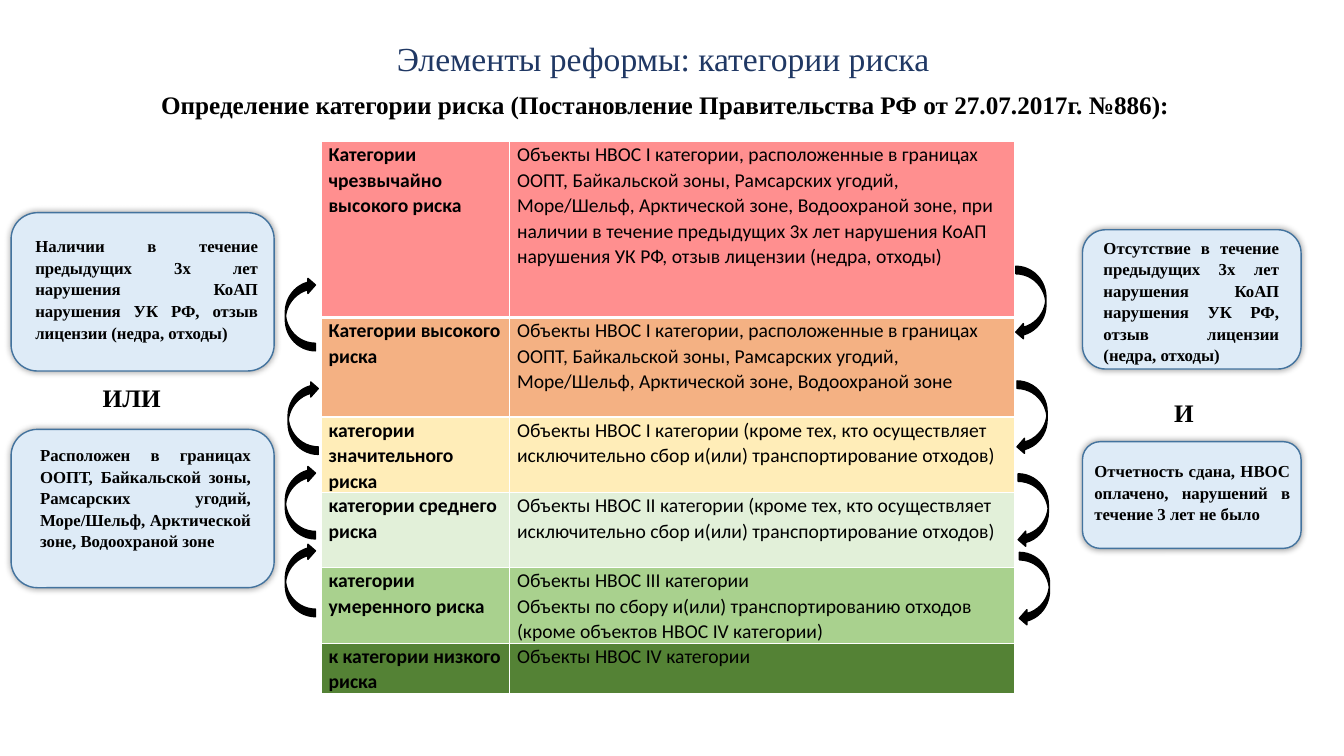
from dataclasses import dataclass

from pptx import Presentation
from pptx.dml.color import RGBColor
from pptx.enum.shapes import MSO_SHAPE as Preset
from pptx.enum.text import MSO_AUTO_SIZE as AutoSize, PP_ALIGN as Align
from pptx.oxml import parse_xml
from pptx.oxml.ns import nsdecls
from pptx.util import Cm, Pt


@dataclass(frozen=True)
class Theme:
    serif: str = "Times New Roman"
    sans: str = "Calibri"
    title_size: int = 24
    heading_size: int = 18
    table_size: int = 14
    note_size: int = 12
    title: str = "203864"
    ink: str = "000000"
    white: str = "FFFFFF"
    card: str = "DEEBF7"
    card_edge: str = "43739E"
    extreme: str = "FF0000"
    high: str = "F4B183"
    significant: str = "FFD966"
    medium: str = "E2F0D9"
    moderate: str = "A9D18E"
    low: str = "548235"
    line_spacing: float = 1.07


def color(value):
    return RGBColor.from_string(value)


def apply(target, values):
    for name, value in values.items():
        setattr(target, name, value)


def lengths(box):
    return [Cm(value) for value in box]


class RiskSlide:
    def __init__(self, slide, theme):
        self.slide = slide
        self.theme = theme

    def fill_text(self, frame, text, size, **style):
        values = {"font": self.theme.serif, "ink": self.theme.ink, "bold": True,
                  "align": None, "spacing": None} | style
        frame.text = text
        for paragraph in frame.paragraphs:
            apply(paragraph, {"alignment": values["align"], "line_spacing": values["spacing"]})
            for run in paragraph.runs:
                apply(run.font, {"name": values["font"], "size": Pt(size), "bold": values["bold"]})
                run.font.color.rgb = color(values["ink"])

    def text(self, box, text, size, wrap=True, **style):
        frame = self.slide.shapes.add_textbox(*lengths(box)).text_frame
        apply(frame, {"word_wrap": wrap, "auto_size": AutoSize.SHAPE_TO_FIT_TEXT})
        self.fill_text(frame, text, size, **style)

    def shape(self, preset, box, fill, edge):
        shape = self.slide.shapes.add_shape(preset, *lengths(box))
        shape.shadow.inherit = False
        shape.fill.solid()
        shape.fill.fore_color.rgb = color(fill)
        shape.line.color.rgb = color(edge)
        shape.line.width = Pt(1)
        return shape

    def card(self, box):
        shape = self.shape(Preset.ROUNDED_RECTANGLE, box, self.theme.card, self.theme.card_edge)
        shape._element.spPr.find("{*}effectLst").append(parse_xml(
            f'<a:outerShdw {nsdecls("a")} blurRad="{Pt(5)}" dist="0" dir="0">'
            f'<a:srgbClr val="{self.theme.ink}"><a:alpha val="40000"/></a:srgbClr></a:outerShdw>'))

    def arrow(self, left, top, rotation=0):
        shape = self.shape(Preset.CURVED_LEFT_ARROW, (left, top, 0.76, 1.85),
                           self.theme.ink, self.theme.ink)
        shape.rotation = rotation

    def cell(self, cell, text, fill, alpha, bold, borders):
        margins = {"margin_left": Cm(0.18), "margin_right": Cm(0.18),
                   "margin_top": 0, "margin_bottom": 0}
        apply(cell, margins)
        self.fill_text(cell.text_frame, text, self.theme.table_size, font=self.theme.sans,
                       bold=bold, spacing=self.theme.line_spacing)
        cell.fill.solid()
        cell.fill.fore_color.rgb = color(fill)
        properties = cell._tc.tcPr
        if alpha < 100:
            properties.find(".//{*}srgbClr").append(
                parse_xml(f'<a:alpha {nsdecls("a")} val="{alpha * 1000}"/>'))
        for index, (side, width) in enumerate(borders.items()):
            properties.insert(index, parse_xml(
                f'<a:ln{side} {nsdecls("a")} w="{Pt(width)}"><a:solidFill>'
                f'<a:srgbClr val="{self.theme.white}"/></a:solidFill></a:ln{side}>'))

    def table(self, left, top, widths, rows):
        heights = [row[0] for row in rows]
        box = (left, top, sum(widths), sum(heights))
        table = self.slide.shapes.add_table(len(rows), len(widths), *lengths(box)).table
        apply(table, {"first_row": False, "horz_banding": False})
        for column, width in zip(table.columns, widths):
            column.width = Cm(width)
        for index, (height, fill, alpha, *texts) in enumerate(rows):
            table.rows[index].height = Cm(height)
            borders = {"L": 1, "R": 1, "T": 3 if index == 1 else 1, "B": 3 if index == 0 else 1}
            for column, text in enumerate(texts):
                self.cell(table.cell(index, column), text, fill, alpha, column == 0, borders)


def main():
    presentation = Presentation()
    apply(presentation, {"slide_width": Cm(33.87), "slide_height": Cm(19.05)})
    theme = Theme()
    slide = RiskSlide(presentation.slides.add_slide(presentation.slide_layouts[6]), theme)

    cards = [(27.28, 11.13, 5.51, 2.69), (27.28, 5.79, 5.51, 3.51),
             (0.28, 10.82, 6.63, 3.99), (0.28, 5.36, 6.63, 3.99)]
    for box in cards:
        slide.card(box)

    slide.text((3.02, 0.84, 27.38, 1.27), "Элементы реформы: категории риска",
               theme.title_size, ink=theme.title, bold=False, align=Align.CENTER)
    slide.text((2.34, 2.13, 29.01, 1.02),
               "Определение категории риска (Постановление Правительства РФ от 27.07.2017г. №886): ",
               theme.heading_size, align=Align.CENTER)

    violations = "нарушения КоАП нарушения УК РФ, отзыв лицензии (недра, отходы)"
    zones = "Рамсарских угодий, Море/Шельф, Арктической зоне, Водоохраной зоне"
    located = f"Объекты НВОС I категории, расположенные в границах ООПТ, Байкальской зоны, {zones}"
    except_waste = "(кроме тех, кто осуществляет исключительно сбор и(или) транспортирование отходов)"
    slide.table(8.1, 3.56, (4.75, 12.72), [
        (4.44, theme.extreme, 44, "Категории чрезвычайно высокого риска",
         f"{located}, при наличии в течение предыдущих 3х лет {violations}"),
        (2.51, theme.high, 100, "Категории высокого риска", located),
        (1.89, theme.significant, 46, "категории значительного риска",
         f"Объекты НВОС I категории {except_waste}"),
        (1.89, theme.medium, 100, "категории среднего риска",
         f"Объекты НВОС II категории {except_waste}"),
        (1.89, theme.moderate, 100, "категории умеренного риска",
         "Объекты НВОС III категории\nОбъекты по сбору и(или) транспортированию отходов "
         "(кроме объектов НВОС IV категории)"),
        (1.26, theme.low, 100, "к категории низкого риска", "Объекты НВОС IV категории"),
    ])

    for index, top in enumerate((6.71, 9.6, 11.94, 13.92)):
        slide.arrow(25.6 + 0.03 * index, top)
    for left, top in ((7.19, 6.99), (7.26, 9.6), (7.19, 11.73), (7.19, 13.69)):
        slide.arrow(left, top, rotation=180)

    notes = [
        ((0.64, 5.79, 6.12, 2.97), f"Наличии в течение предыдущих 3х лет {violations}"),
        ((0.76, 11.05, 5.82, 3.51), f"Расположен в границах ООПТ, Байкальской зоны, {zones} "),
        ((27.56, 5.82, 4.93, 3.53), f"Отсутствие в течение предыдущих 3х лет {violations}"),
        ((27.33, 11.46, 5.44, 1.9),
         "Отчетность сдана, НВОС оплачено, нарушений в течение 3 лет не было"),
    ]
    for box, text in notes:
        slide.text(box, text, theme.note_size, align=Align.JUSTIFY, spacing=theme.line_spacing)

    for box, text in (((2.34, 9.5, 1.98, 1.02), "ИЛИ"), ((29.34, 9.88, 1.02, 1.02), "И")):
        slide.text(box, text, theme.heading_size, wrap=False)

    presentation.save("out.pptx")


if __name__ == "__main__":
    main()
